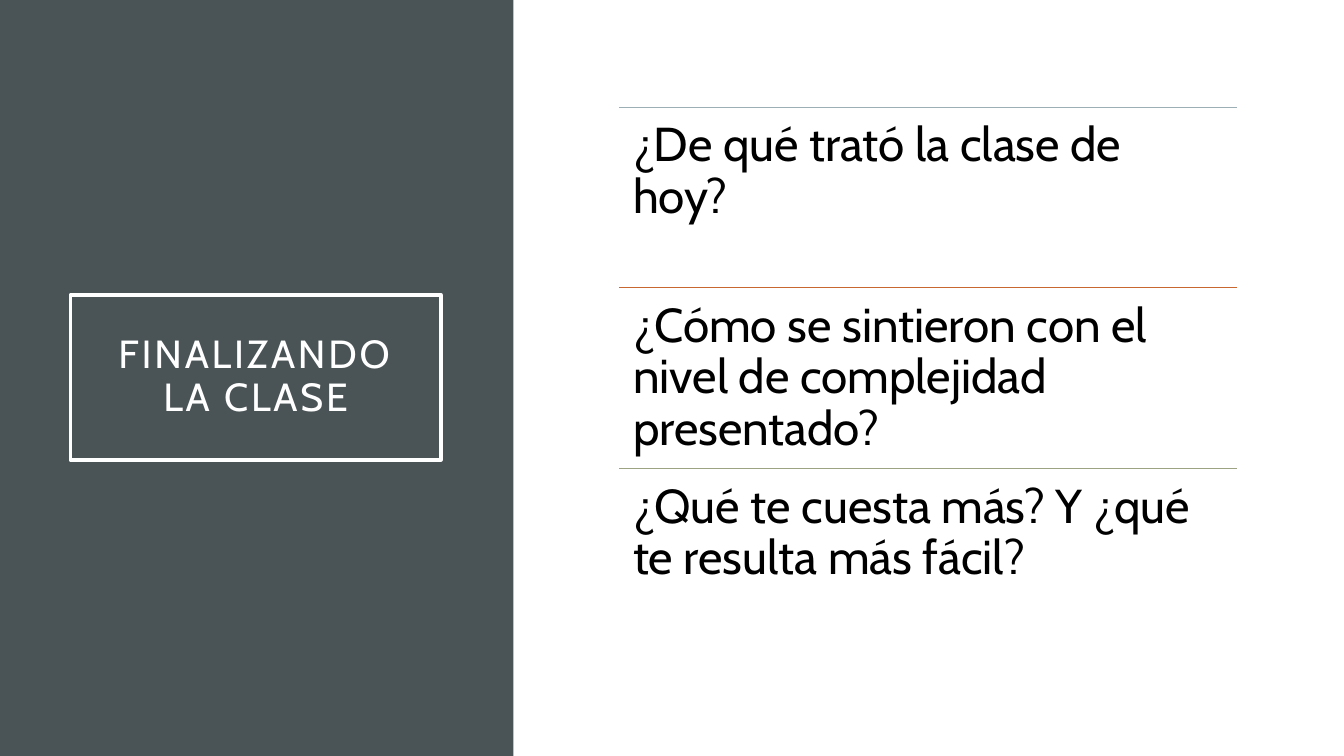
"""Build the closing slide: a title panel and three ruled questions."""
from dataclasses import dataclass

import pptx
import pptx.dml.color
import pptx.enum.shapes
import pptx.enum.text
import pptx.oxml.ns
import pptx.shapes.autoshape
import pptx.slide
import pptx.util
from lxml import etree

RGBColor = pptx.dml.color.RGBColor
WHITE = RGBColor(0xFF, 0xFF, 0xFF)
BLACK = RGBColor(0x00, 0x00, 0x00)
SLATE = RGBColor(0x4A, 0x53, 0x56)
MIST = RGBColor(0x9B, 0xAF, 0xB5)
RUST = RGBColor(0xC9, 0x67, 0x31)
OLIVE = RGBColor(0x9C, 0xA3, 0x83)

FONT = "Cabin"
EMU_PER_PX = 9525
LIST_LEFT, LIST_TOP, LIST_WIDTH, ROW_HEIGHT = 590, 102, 588, 172


@dataclass(frozen=True)
class Question:
    """A question and the colour of the rule above it."""

    text: str
    rule: RGBColor


QUESTIONS = (
    Question("¿De qué trató la clase de hoy?", MIST),
    Question("¿Cómo se sintieron con el nivel de complejidad presentado?", RUST),
    Question("¿Qué te cuesta más? Y ¿qué te resulta más fácil?", OLIVE),
)


def px(n: int) -> pptx.util.Emu:
    """Turn pixels into EMU."""
    return pptx.util.Emu(n * EMU_PER_PX)


def add_rectangle(
    s: pptx.slide.Slide, left: int, top: int, width: int, height: int
) -> pptx.shapes.autoshape.Shape:
    """Add a rectangle without a shadow."""
    sp = s.shapes.add_shape(
        pptx.enum.shapes.MSO_SHAPE.RECTANGLE, px(left), px(top), px(width), px(height)
    )
    sp.shadow.inherit = False
    return sp


def write_text(
    sp: pptx.shapes.autoshape.Shape, text: str, size: int, color: RGBColor, inset: int
) -> None:
    """Fill a shape with one wrapped paragraph."""
    tf = sp.text_frame
    tf.word_wrap = True
    tf.margin_left = tf.margin_top = tf.margin_right = tf.margin_bottom = px(inset)
    p = tf.paragraphs[0]
    p.text = text
    p.line_spacing = 0.9
    p.font.name = FONT
    p.font.size = pptx.util.Pt(size)
    p.font.color.rgb = color


def add_title(s: pptx.slide.Slide) -> None:
    """Add the dark panel and the framed title."""
    panel = add_rectangle(s, 0, 0, 489, 720)
    panel.fill.solid()
    panel.fill.fore_color.rgb = SLATE
    panel.line.fill.background()

    sp = add_rectangle(s, 67, 281, 353, 157)
    sp.fill.background()
    sp.line.color.rgb = WHITE
    sp.line.width = pptx.util.Pt(2.5)
    write_text(sp, "FINALIZANDO LA CLASE", 28, WHITE, 19)
    sp.text_frame.vertical_anchor = pptx.enum.text.MSO_ANCHOR.MIDDLE
    p = sp.text_frame.paragraphs[0]
    p.alignment = pptx.enum.text.PP_ALIGN.CENTER
    p.runs[0].font._element.set("spc", "200")


def add_question(s: pptx.slide.Slide, question: Question, top: int) -> None:
    """Add a question under its coloured rule."""
    rule = s.shapes.add_connector(
        pptx.enum.shapes.MSO_CONNECTOR.STRAIGHT,
        px(LIST_LEFT), px(top), px(LIST_LEFT + LIST_WIDTH), px(top),
    )
    rule.line.color.rgb = question.rule
    rule.line.width = pptx.util.Pt(0.5)
    etree.SubElement(rule._element.spPr, pptx.oxml.ns.qn("a:effectLst"))

    sp = s.shapes.add_textbox(px(LIST_LEFT), px(top), px(LIST_WIDTH), px(ROW_HEIGHT))
    write_text(sp, question.text, 34, BLACK, 13)


def main() -> None:
    """Build and save the slide."""
    prs = pptx.Presentation()
    prs.slide_width, prs.slide_height = px(1280), px(720)
    s = prs.slides.add_slide(prs.slide_layouts[6])
    add_title(s)
    for i, question in enumerate(QUESTIONS):
        add_question(s, question, LIST_TOP + i * ROW_HEIGHT)
    prs.save("out.pptx")


if __name__ == "__main__":
    main()
